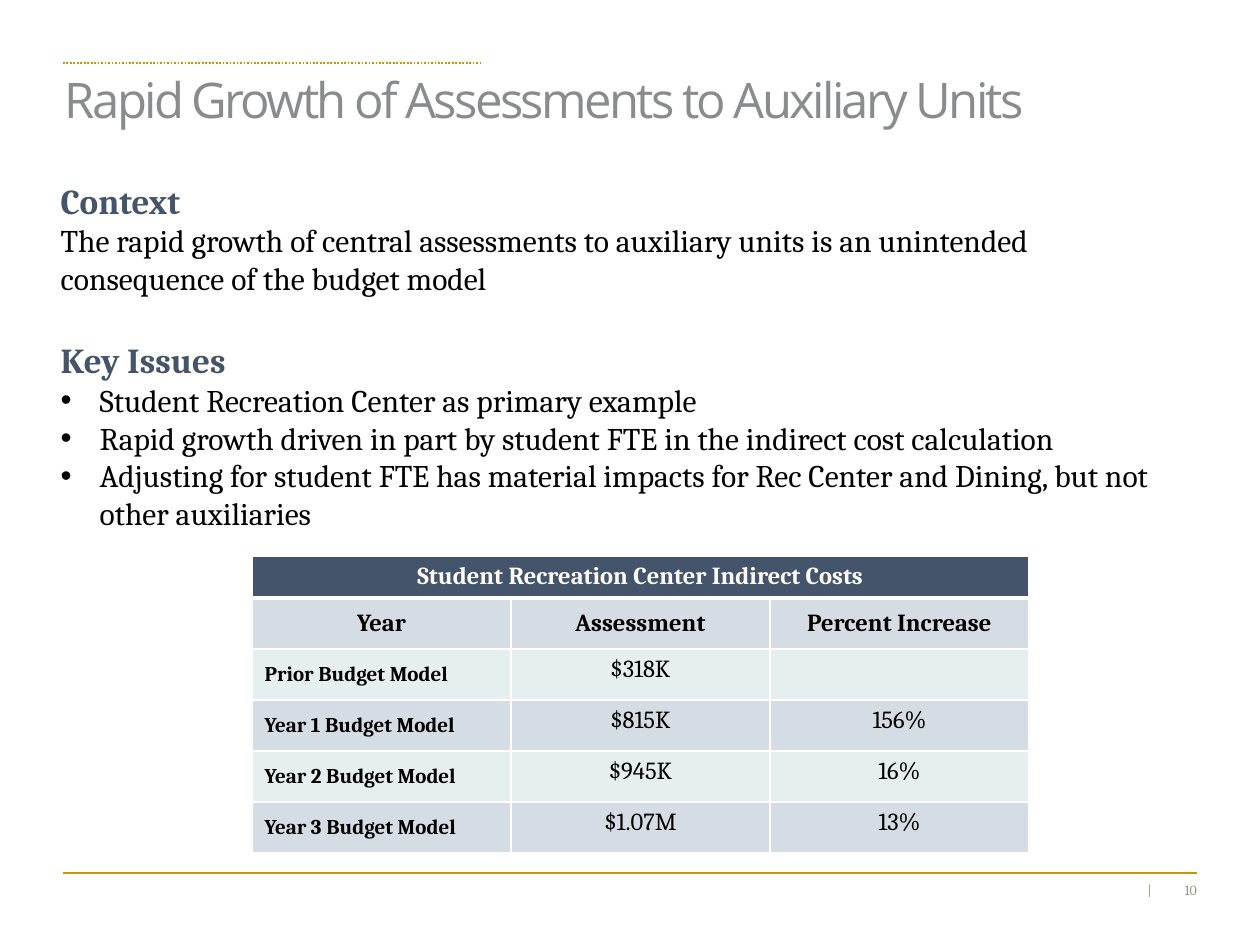
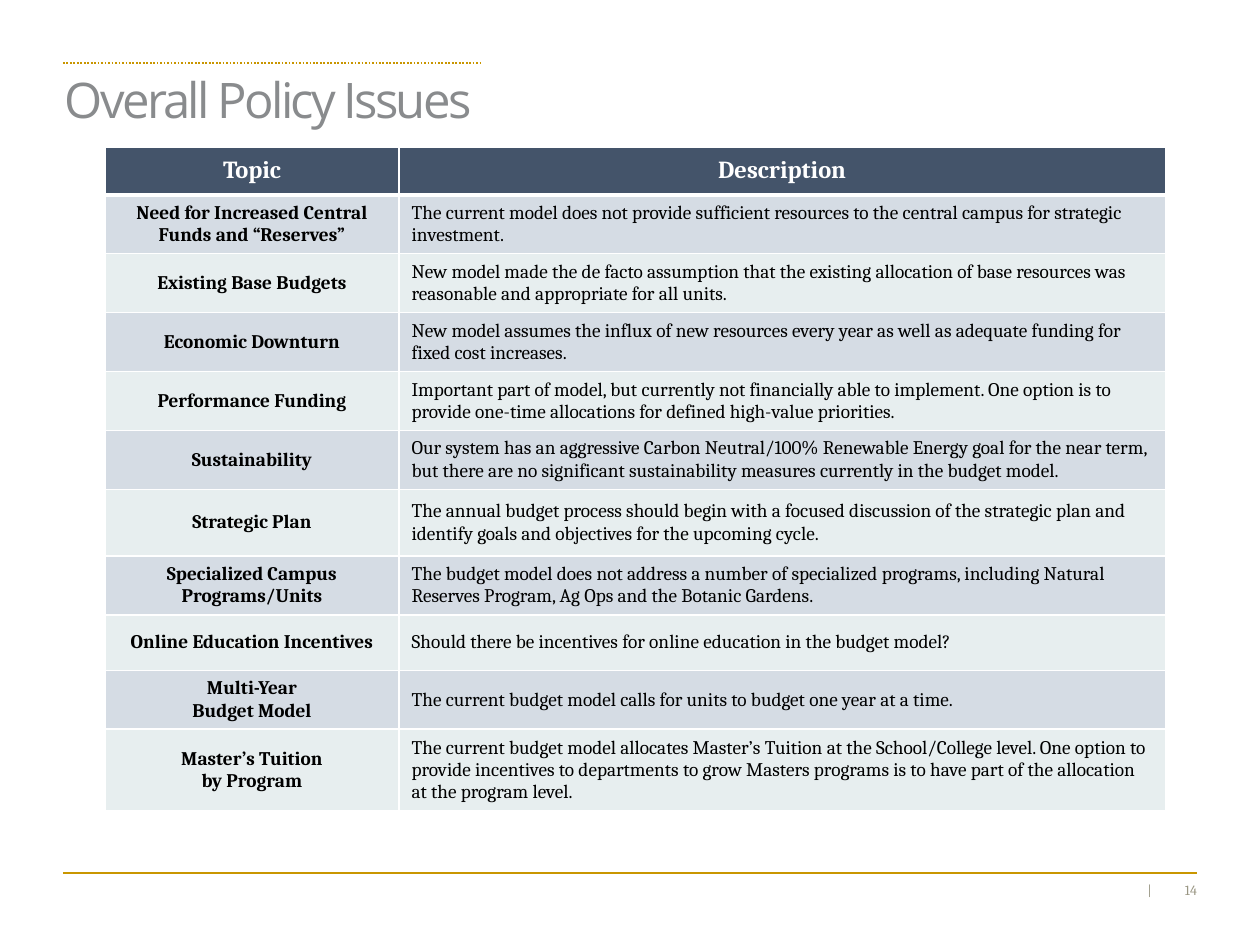
from collections import namedtuple

from lxml import etree
from pptx import Presentation
from pptx.dml.color import RGBColor
from pptx.enum.dml import MSO_LINE
from pptx.enum.shapes import MSO_CONNECTOR
from pptx.enum.text import MSO_ANCHOR, MSO_AUTO_SIZE, PP_ALIGN
from pptx.oxml.ns import qn
from pptx.util import Inches, Pt

NAVY = RGBColor(0x44, 0x54, 0x6A)
GOLD = RGBColor(0xC9, 0x96, 0x00)
TITLE_GREY = RGBColor(0x89, 0x8B, 0x8D)
FOOTER_GREY = RGBColor(0x99, 0x96, 0x83)
WHITE = RGBColor(0xFF, 0xFF, 0xFF)
BLACK = RGBColor(0x00, 0x00, 0x00)
BANDS = (RGBColor(0xD5, 0xDC, 0xE4), RGBColor(0xE7, 0xEE, 0xEF))

BODY_FONT = "Cambria"
TITLE_FONT = "Open Sans"
LEFT, CENTER, RIGHT = PP_ALIGN.LEFT, PP_ALIGN.CENTER, PP_ALIGN.RIGHT
TOP, MIDDLE = MSO_ANCHOR.TOP, MSO_ANCHOR.MIDDLE
FIT_SHAPE = MSO_AUTO_SIZE.SHAPE_TO_FIT_TEXT
STRAIGHT = MSO_CONNECTOR.STRAIGHT
DOTTED = MSO_LINE.ROUND_DOT

# The slide is a grid of 120 columns by 90 rows.
COLS, ROWS = 120, 90
SLIDE_W, SLIDE_H = Inches(10), Inches(7.5)
Box = namedtuple("Box", "left top width height")

TITLE_BOX = Box(5, 6, 106, 12.5)
BODY_BOX = Box(4.6, 16.48, 108, 42.36)
COST_BOX = Box(24, 52.96, 74, 28.32)
POLICY_BOX = Box(10, 14, 101, 65.64)
MARGIN_LEFT, MARGIN_RIGHT = 6, 114

COST_ROW_HEIGHTS = [3.6] + [4.86] * 5
COST_TITLE = "Student Recreation Center Indirect Costs"
COST_HEADINGS = ("Year", "Assessment", "Percent Increase")
COSTS = [
    ("Prior Budget Model", "$318K", ""),
    ("Year 1 Budget Model", "$815K", "156%"),
    ("Year 2 Budget Model", "$945K", "16%"),
    ("Year 3 Budget Model", "$1.07M", "13%"),
]
ISSUES = [
    "Student Recreation Center as primary example",
    "Rapid growth driven in part by student FTE in the indirect cost calculation",
    "Adjusting for student FTE has material impacts for Rec Center and Dining, "
    "but not other auxiliaries",
]

POLICY_ROW_HEIGHTS = [4.56] + [5.52] * 5 + [6.36, 5.52, 5.28, 5.52, 5.52]
POLICIES = [
    ("Need for Increased Central Funds and “Reserves”",
     "The current model does not provide sufficient resources to the central campus "
     "for strategic investment."),
    ("Existing Base Budgets",
     "New model made the de facto assumption that the existing allocation of base "
     "resources was reasonable and appropriate for all units."),
    ("Economic Downturn",
     "New model assumes the influx of new resources every year as well as adequate "
     "funding for fixed cost increases."),
    ("Performance Funding",
     "Important part of model, but currently not financially able to implement. One "
     "option is to provide one-time allocations for defined high-value priorities."),
    ("Sustainability",
     "Our system has an aggressive Carbon Neutral/100% Renewable Energy goal for the "
     "near term, but there are no significant sustainability measures currently in "
     "the budget model."),
    ("Strategic Plan",
     "The annual budget process should begin with a focused discussion of the "
     "strategic plan and identify goals and objectives for the upcoming cycle."),
    ("Specialized Campus Programs/Units",
     "The budget model does not address a number of specialized programs, including "
     "Natural Reserves Program, Ag Ops and the Botanic Gardens."),
    ("Online Education Incentives",
     "Should there be incentives for online education in the budget model?"),
    ("Multi-Year\nBudget Model",
     "The current budget model calls for units to budget one year at a time."),
    ("Master’s Tuition\nby Program",
     "The current budget model allocates Master’s Tuition at the School/College "
     "level. One option to provide incentives to departments to grow Masters programs "
     "is to have part of the allocation at the program level."),
]


def x(cols):
    return round(SLIDE_W * cols / COLS)


def y(rows):
    return round(SLIDE_H * rows / ROWS)


def write(tf, text, size=18, color=BLACK, font=BODY_FONT, bold=False, align=LEFT,
          before=0, spacing=None, bullet=False):
    """Add each line of text as a paragraph, filling an empty first one."""
    for line in text.split("\n"):
        p = tf.paragraphs[0] if not tf.text else tf.add_paragraph()
        p.alignment = align
        p.space_before = Pt(before)
        if bullet:
            add_bullet(p)
        r = p.add_run()
        r.text = line
        r.font.size, r.font.name, r.font.bold = Pt(size), font, bold
        r.font.color.rgb = color
        if spacing is not None:
            r.font._element.set("spc", str(round(spacing * 100)))


def add_bullet(p, indent=Inches(0.31)):
    pPr = p._p.get_or_add_pPr()
    pPr.set("marL", str(indent))
    pPr.set("indent", str(-indent))
    etree.SubElement(pPr, qn("a:buFont"), typeface="Arial")
    etree.SubElement(pPr, qn("a:buChar"), char="•")


def add_text_box(slide, box, wrap=True):
    sp = slide.shapes.add_textbox(x(box.left), y(box.top), x(box.width), y(box.height))
    tf = sp.text_frame
    tf.word_wrap = wrap
    tf.auto_size = FIT_SHAPE
    return tf


def add_rule(slide, right, row, dash=None):
    line = slide.shapes.add_connector(STRAIGHT, x(MARGIN_LEFT), y(row), x(right), y(row))
    line.line.color.rgb = GOLD
    line.line.width = Pt(1)
    if dash is not None:
        line.line.dash_style = dash
    etree.SubElement(line._element.spPr, qn("a:effectLst"))


def add_footer_text(slide, text, left, width):
    tf = add_text_box(slide, Box(left, 84, width, 1.56), wrap=False)
    tf.margin_left = tf.margin_right = tf.margin_top = tf.margin_bottom = 0
    write(tf, text, size=8, color=FOOTER_GREY, align=RIGHT)


def add_base_slide(prs, title, number):
    slide = prs.slides.add_slide(prs.slide_layouts[6])
    add_rule(slide, 45.84, 6, DOTTED)
    add_rule(slide, MARGIN_RIGHT, 83.16)
    add_footer_text(slide, str(number), 112, 2)
    add_footer_text(slide, "|", 109.2, 0.5)
    write(add_text_box(slide, TITLE_BOX), title, size=28, color=TITLE_GREY,
          font=TITLE_FONT, spacing=-1.5)
    return slide


def set_borders(cell, top, bottom):
    tcPr = cell._tc.get_or_add_tcPr()
    for side, width in (("L", 1), ("R", 1), ("T", top), ("B", bottom)):
        ln = etree.SubElement(tcPr, qn(f"a:ln{side}"), w=str(Pt(width)))
        fill = etree.SubElement(ln, qn("a:solidFill"))
        etree.SubElement(fill, qn("a:srgbClr"), val=str(WHITE))


def add_banded_table(slide, box, col_widths, row_heights):
    """Add an empty table with a navy first row, two band colours and white rules."""
    frame = slide.shapes.add_table(len(row_heights), len(col_widths), x(box.left),
                                   y(box.top), x(box.width), y(box.height))
    table = frame.table
    table.first_row = table.horz_banding = False
    for col, width in zip(table.columns, col_widths):
        col.width = x(width)
    for i, (row, height) in enumerate(zip(table.rows, row_heights)):
        row.height = y(height)
        for cell in row.cells:
            set_borders(cell, top=3 if i == 1 else 1, bottom=3 if i == 0 else 1)
            cell.fill.solid()
            cell.fill.fore_color.rgb = BANDS[(i - 1) % 2] if i else NAVY
    return table


def fill_cell(cell, text, anchor=MIDDLE, **fmt):
    cell.vertical_anchor = anchor
    write(cell.text_frame, text, **fmt)


def add_context(slide, box):
    tf = add_text_box(slide, box)
    heading = dict(size=20, color=NAVY, bold=True)
    write(tf, "Context", **heading)
    write(tf, "The rapid growth of central assessments to auxiliary units is an "
              "unintended consequence of the budget model")
    write(tf, "Key Issues", before=24, **heading)
    write(tf, "\n".join(ISSUES), bullet=True)


def add_cost_table(slide, box):
    n = len(COST_HEADINGS)
    table = add_banded_table(slide, box, [box.width / n] * n, COST_ROW_HEIGHTS)
    table.cell(0, 0).merge(table.cell(0, n - 1))
    fill_cell(table.cell(0, 0), COST_TITLE, anchor=TOP, size=14, color=WHITE,
              bold=True, align=CENTER)
    for j, heading in enumerate(COST_HEADINGS):
        fill_cell(table.cell(1, j), heading, size=14, bold=True, align=CENTER)
    for i, (year, *figures) in enumerate(COSTS, start=2):
        fill_cell(table.cell(i, 0), year, size=12, bold=True)
        for j, figure in enumerate(figures, start=1):
            fill_cell(table.cell(i, j), figure, anchor=TOP, size=14, align=CENTER)


def add_policy_table(slide, box):
    topic_width = 28
    table = add_banded_table(slide, box, [topic_width, box.width - topic_width],
                             POLICY_ROW_HEIGHTS)
    for j, heading in enumerate(("Topic", "Description")):
        fill_cell(table.cell(0, j), heading, size=14, color=WHITE, bold=True,
                  align=CENTER)
    for i, (topic, description) in enumerate(POLICIES, start=1):
        fill_cell(table.cell(i, 0), topic, size=11, bold=True, align=CENTER)
        fill_cell(table.cell(i, 1), description, size=11)


def main():
    prs = Presentation()
    prs.slide_width, prs.slide_height = SLIDE_W, SLIDE_H

    slide = add_base_slide(prs, "Rapid Growth of Assessments to Auxiliary Units", 10)
    add_context(slide, BODY_BOX)
    add_cost_table(slide, COST_BOX)

    slide = add_base_slide(prs, "Overall Policy Issues", 14)
    add_policy_table(slide, POLICY_BOX)

    prs.save("out.pptx")


if __name__ == "__main__":
    main()
